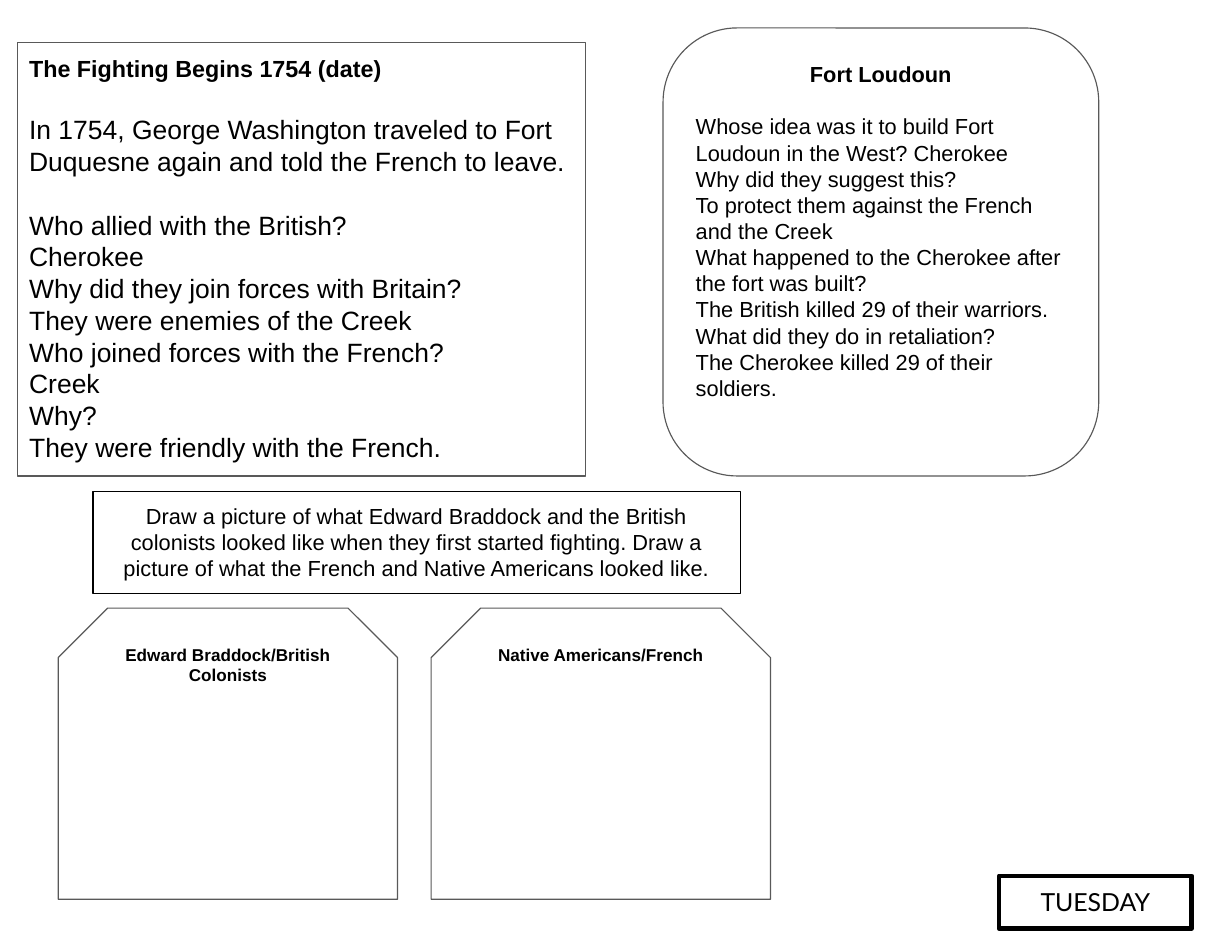
from dataclasses import dataclass

from pptx import Presentation
from pptx.dml import color
from pptx.enum import shapes, text
from pptx.oxml import ns, xmlchemy
from pptx.util import Inches, Pt


@dataclass(frozen=True)
class Theme:
    ink: color.RGBColor = color.RGBColor(0, 0, 0)
    outline: color.RGBColor = color.RGBColor(0x59, 0x59, 0x59)
    paper: color.RGBColor = color.RGBColor(255, 255, 255)
    font: str = "Arial"
    day_font: str = "Lato"
    notes: int = 17
    day: int = 16
    heading: int = 15
    body: int = 14
    label: int = 11
    thin: float = 0.75
    thick: float = 3
    line_height: float = 1.2


THEME = Theme()
LEFT, CENTER = text.PP_ALIGN.LEFT, text.PP_ALIGN.CENTER

FIGHTING = [
    "Who allied with the British?",
    "Cherokee",
    "Why did they join forces with Britain?",
    "They were enemies of the Creek",
    "Who joined forces with the French?",
    "Creek",
    "Why?",
    "They were friendly with the French.",
]
FORT = [
    "Whose idea was it to build Fort Loudoun in the West? Cherokee",
    "Why did they suggest this?",
    "To protect them against the French and the Creek",
    "What happened to the Cherokee after the fort was built?",
    "The British killed 29 of their warriors.",
    "What did they do in retaliation?",
    "The Cherokee killed 29 of their soldiers.",
]
DRAWINGS = ["Edward Braddock/British Colonists", "Native Americans/French"]


def style_box(sp, line=THEME.outline, width=THEME.thin, filled=False):
    sp.shadow.inherit = False
    if filled:
        sp.fill.solid()
        sp.fill.fore_color.rgb = THEME.paper
    else:
        sp.fill.background()
    sp.line.color.rgb = line
    sp.line.width = Pt(width)
    tf = sp.text_frame
    tf.word_wrap = True
    tf.auto_size = text.MSO_AUTO_SIZE.NONE
    tf.vertical_anchor = text.MSO_ANCHOR.TOP
    tf.margin_left = tf.margin_right = Inches(0.1)
    tf.margin_top = tf.margin_bottom = Inches(0.1)
    return sp


def add_box(s, kind, at, adj=None, **style):
    sp = s.shapes.add_shape(kind, *map(Inches, at))
    if adj is not None:
        sp.adjustments[0] = adj
    return style_box(sp, **style)


def place_holder(sp, at, **style):
    sp.left, sp.top, sp.width, sp.height = map(Inches, at)
    return style_box(sp, **style)


def remove_bullet(p):
    pPr = p._p.get_or_add_pPr()
    pPr.set("marL", "0")
    pPr.set("indent", "0")
    pPr.append(xmlchemy.OxmlElement("a:buNone"))


def write(sp, content, size, align=LEFT, bold=False, gap=False, font=THEME.font):
    tf = sp.text_frame
    p = tf.add_paragraph() if tf.text else tf.paragraphs[0]
    p.alignment = align
    p.space_before = Pt(size * THEME.line_height if gap else 0)
    p.space_after = Pt(0)
    remove_bullet(p)
    r = p.add_run()
    r.text = content
    r.font.name = font
    r.font.size = Pt(size)
    r.font.bold = bold
    r.font.color.rgb = THEME.ink


def write_answers(sp, lines, size):
    for i, line in enumerate(lines):
        write(sp, line, size, gap=i == 0)


def add_drawing_frames(s):
    for i, label in enumerate(DRAWINGS):
        frame = add_box(s, shapes.MSO_SHAPE.SNIP_2_SAME_RECTANGLE,
                        (0.52 + 3.33 * i, 5.43, 3.03, 2.6), adj=0.17, filled=True)
        write(frame, label, THEME.label, CENTER, bold=True)


def main():
    prs = Presentation()
    prs.slide_width, prs.slide_height = Inches(11), Inches(8.5)
    s = prs.slides.add_slide(prs.slide_layouts[1])

    day = place_holder(s.shapes.title, (8.92, 7.82, 1.72, 0.47),
                       line=THEME.ink, width=THEME.thick)
    write(day, "TUESDAY", THEME.day, CENTER, font=THEME.day_font)

    fighting = place_holder(s.placeholders[1], (0.16, 0.38, 5.07, 3.87))
    write(fighting, "The Fighting Begins 1754 (date)", THEME.heading, bold=True)
    write(fighting, "In 1754, George Washington traveled to Fort Duquesne again "
                    "and told the French to leave.", THEME.notes, gap=True)
    write_answers(fighting, FIGHTING, THEME.notes)

    add_drawing_frames(s)

    task = add_box(s, shapes.MSO_SHAPE.RECTANGLE, (0.83, 4.39, 5.78, 0.91), line=THEME.ink)
    write(task, "Draw a picture of what Edward Braddock and the British colonists "
                "looked like when they first started fighting. Draw a picture of "
                "what the French and Native Americans looked like.", THEME.body, CENTER)

    fort = add_box(s, shapes.MSO_SHAPE.ROUNDED_RECTANGLE, (5.92, 0.25, 3.89, 4),
                   adj=0.17, filled=True)
    write(fort, "Fort Loudoun", THEME.body, CENTER, bold=True)
    write_answers(fort, FORT, THEME.body)

    prs.save("out.pptx")


if __name__ == "__main__":
    main()
